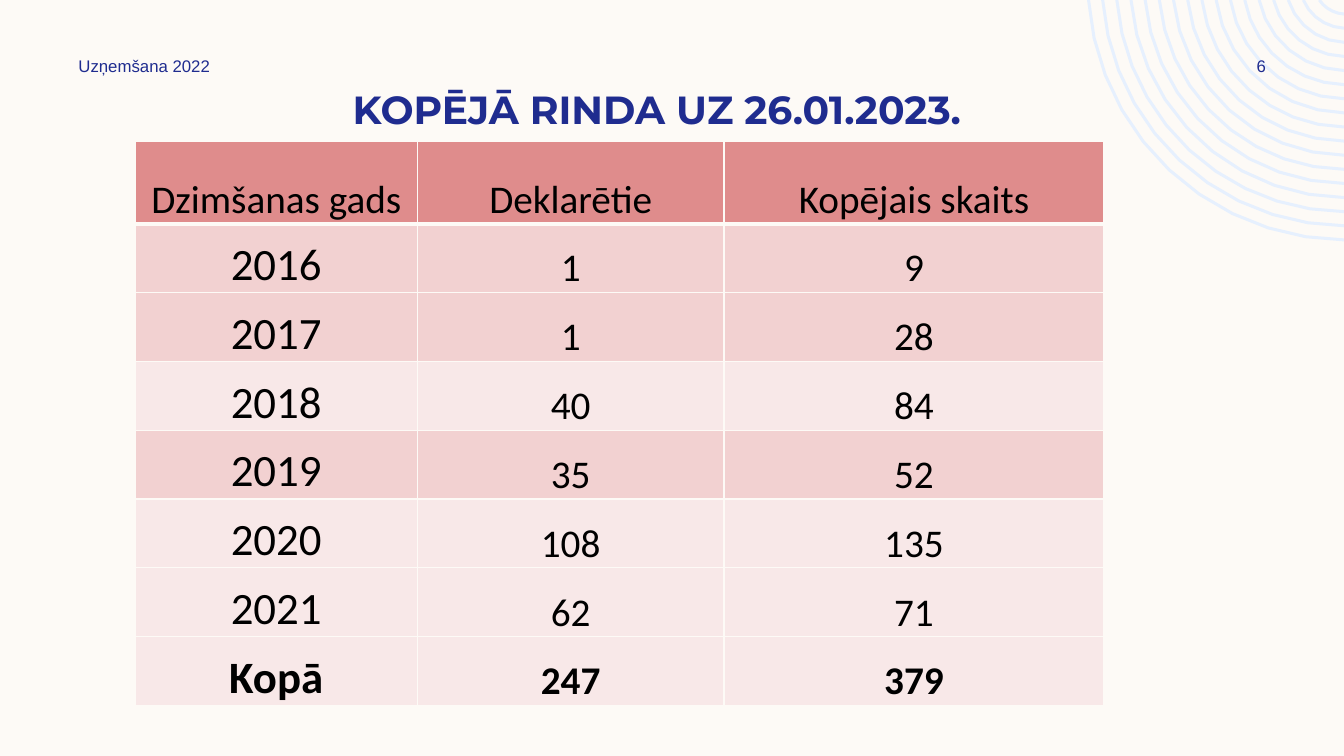
import math
import pptx
import pptx.util
import pptx.dml.color
import pptx.enum.text
import pptx.oxml.ns
from lxml import etree

Inches = pptx.util.Inches
ALIGN = pptx.enum.text.PP_ALIGN
ANCHOR = pptx.enum.text.MSO_ANCHOR
CREAM, NAVY, SKY, BLACK = "FDFAF6", "1F2C8F", "E6F0FE", "000000"
HEAD, ROSE, BLUSH = "DF8C8C", "F2D1D1", "F8E8E8"
WIDE, HIGH = 13.33, 7.5

ROWS = [
    (HEAD, "Dzimšanas gads", "Deklarētie", "Kopējais skaits"),
    (ROSE, "2016", "1", "9"),
    (ROSE, "2017", "1", "28"),
    (BLUSH, "2018", "40", "84"),
    (ROSE, "2019", "35", "52"),
    (BLUSH, "2020", "108", "135"),
    (BLUSH, "2021", "62", "71"),
    (BLUSH, "Kopā", "247", "379"),
]
SHARES = (2.8, 3.04, 3.77)


def color(code):
    return pptx.dml.color.RGBColor.from_string(code)


def paint(fill, code):
    fill.solid()
    fill.fore_color.rgb = color(code)


def write(frame, text, size, font, code, bold=False, align=ALIGN.CENTER):
    para = frame.paragraphs[0]
    para.alignment = align
    run = para.add_run()
    run.text = text
    run.font.size = pptx.util.Pt(size)
    run.font.name = font
    run.font.bold = bold
    run.font.color.rgb = color(code)


def label(slide, box, text, size, font, anchor=ANCHOR.MIDDLE, **look):
    frame = slide.shapes.add_textbox(*map(Inches, box)).text_frame
    frame.word_wrap = True
    frame.vertical_anchor = anchor
    write(frame, text, size, font, NAVY, **look)


# Corner rings, cut off at the slide's top and right edges
def rings(slide, box, count=17, step=0.14):
    left, top, width, height = box
    right = left + width
    mid_x, mid_y = right + 0.02, top - 0.18

    def arc(rad):
        start = math.asin((top - mid_y) / rad)
        stop = math.acos((mid_x - right) / rad)
        parts = 4 + round(2.5 * rad)
        turns = [start + (stop - start) * i / parts for i in range(parts + 1)]
        return [(Inches(mid_x - rad * math.cos(t)),
                 Inches(mid_y + rad * math.sin(t))) for t in turns]

    pen = None
    for i in range(count):
        dots = arc(height + 0.17 - i * step)
        if pen is None:
            pen = slide.shapes.build_freeform(*dots[0], scale=1.0)
        else:
            pen.move_to(*dots[0])
        pen.add_line_segments(dots[1:], close=False)
    shape = pen.convert_to_shape()
    shape.shadow.inherit = False
    shape.fill.background()
    paint(shape.line.fill, SKY)
    shape.line.width = Inches(0.03)


# Cell borders
def border(cell, low):
    props = cell._tc.get_or_add_tcPr()
    sides = (("lnL", 1), ("lnR", 1), ("lnT", 1), ("lnB", low))
    for spot, (side, points) in enumerate(sides):
        line = etree.Element(pptx.oxml.ns.qn("a:" + side),
                             w=str(pptx.util.Pt(points)))
        fill = etree.SubElement(line, pptx.oxml.ns.qn("a:solidFill"))
        etree.SubElement(fill, pptx.oxml.ns.qn("a:srgbClr"), val=CREAM)
        props.insert(spot, line)


# Queue table
def queue(slide, box, first=0.82):
    height = box[3]
    table = slide.shapes.add_table(
        len(ROWS), len(SHARES), *map(Inches, box)).table
    for col, share in zip(table.columns, SHARES):
        col.width = Inches(share)
    rest = (height - first) / (len(ROWS) - 1)
    for r, (shade, *texts) in enumerate(ROWS):
        table.rows[r].height = Inches(rest if r else first)
        for c, text in enumerate(texts):
            cell = table.cell(r, c)
            cell.margin_left = cell.margin_right = Inches(0.01)
            cell.margin_top, cell.margin_bottom = Inches(0.01), 0
            cell.vertical_anchor = ANCHOR.BOTTOM
            paint(cell.fill, shade)
            border(cell, 1 if r else 3)
            size = 32 if r and c == 0 else 28
            write(cell.text_frame, text, size, "Calibri", BLACK,
                  bold=r == len(ROWS) - 1)


# Footer text and page number
def footer(slide, box):
    left, top, width, height = box
    label(slide, (left, top, 3.5, height), "Uzņemšana 2022", 12, "Arial",
          align=ALIGN.LEFT)
    label(slide, (left + width - 1.08, top, 1.08, height), "6", 12, "Arial")


def main():
    deck = pptx.Presentation()
    deck.slide_width, deck.slide_height = Inches(WIDE), Inches(HIGH)
    slide = deck.slides.add_slide(deck.slide_layouts[6])
    paint(slide.background.fill, CREAM)
    rings(slide, (WIDE - 2.54, 0, 2.54, 2.39))
    label(slide, (0.68, 0.8, 11.67, 0.84), "KOPĒJĀ RINDA UZ 26.01.2023.",
          28, "Montserrat", anchor=ANCHOR.TOP, bold=True)
    queue(slide, (1.34, 1.4, sum(SHARES), 5.6))
    footer(slide, (0.68, 0.5, 12.37, 0.3))
    deck.save("out.pptx")


if __name__ == "__main__":
    main()
